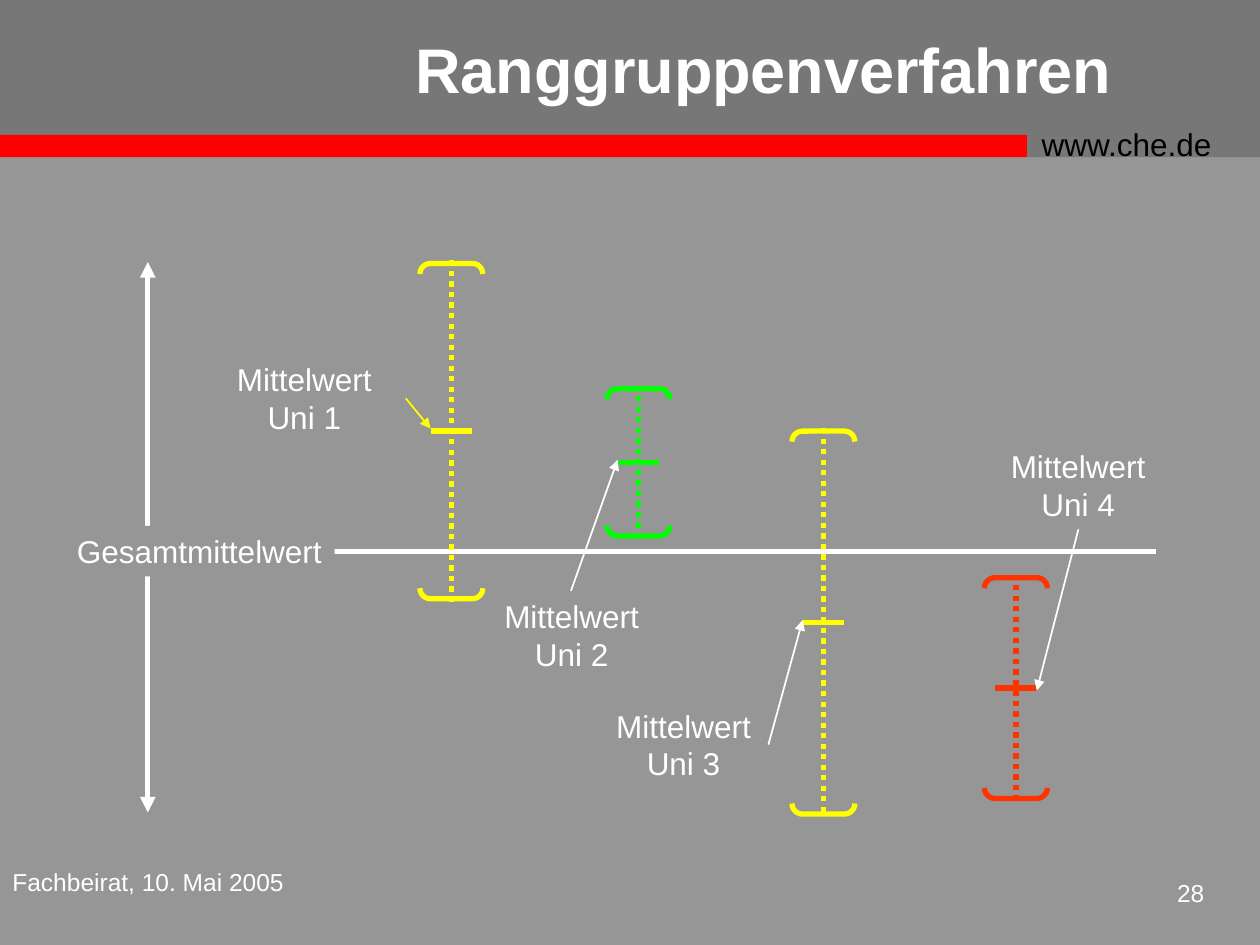
"""Build the slide that explains the ranking group method with four universities."""
from pptx import Presentation, util as u
from pptx.dml.color import RGBColor
from pptx.enum import dml, shapes, text
from pptx.oxml.ns import qn
from lxml import etree

COLORS = {"background": "969696", "header": "777777", "bar": "FF0000", "white": "FFFFFF",
          "black": "000000", "middle": "FFFF00", "top": "00FF00", "bottom": "FF3300"}
CENTER, LEFT, RIGHT = text.PP_ALIGN.CENTER, text.PP_ALIGN.LEFT, text.PP_ALIGN.RIGHT

presentation = Presentation()
presentation.slide_width, presentation.slide_height = u.Cm(25.4), u.Cm(19.05)
slide = presentation.slides.add_slide(presentation.slide_layouts[6])
slide.background.fill.solid()
slide.background.fill.fore_color.rgb = RGBColor.from_string(COLORS["background"])


def add_line(start, end, color, width=3, dash=None, arrows=()):
    connector = slide.shapes.add_connector(
        shapes.MSO_CONNECTOR.STRAIGHT, *(u.Cm(value) for value in (*start, *end)))
    connector.line.color.rgb = RGBColor.from_string(COLORS[color])
    connector.line.width = u.Pt(width)
    if dash:
        connector.line.dash_style = dash
    for arrow in arrows:
        etree.SubElement(connector.line._get_or_add_ln(), qn(f"a:{arrow}"), type="triangle")
    etree.SubElement(connector._element.spPr, qn("a:effectLst"))


def add_text(content, box, size=18, align=LEFT, color="white", bold=False,
             wrap=True, anchor=text.MSO_ANCHOR.TOP, fill=None):
    shape = slide.shapes.add_textbox(*(u.Cm(value) for value in box))
    if fill:
        shape.fill.solid()
        shape.fill.fore_color.rgb = RGBColor.from_string(COLORS[fill])
    frame = shape.text_frame
    frame.word_wrap, frame.vertical_anchor = wrap, anchor
    paragraph = frame.paragraphs[0]
    paragraph.text, paragraph.alignment = content, align
    for run in paragraph.runs:
        for name, value in {"name": "Arial", "size": u.Pt(size), "bold": bold}.items():
            setattr(run.font, name, value)
        run.font.color.rgb = RGBColor.from_string(COLORS[color])


for color, box in (("header", (0, 0, 25.4, 3.17)), ("bar", (0, 2.72, 20.7, 0.45))):
    band = slide.shapes.add_shape(shapes.MSO_SHAPE.RECTANGLE, *(u.Cm(value) for value in box))
    band.shadow.inherit = False
    band.fill.solid()
    band.fill.fore_color.rgb = RGBColor.from_string(COLORS[color])
    band.line.fill.background()

add_text("www.che.de", (20.75, 2.39, 4.45, 1.02), color="black", wrap=False)
add_text("28", (23.06, 17.58, 1.47, 1.07), size=14, align=RIGHT)
add_text("Fachbeirat, 10. Mai 2005", (0, 17.35, 6.1, 1.27), size=14, wrap=False)
add_text("Ranggruppenverfahren", (6.3, 0, 18.19, 2.74), size=36, align=CENTER,
         bold=True, anchor=text.MSO_ANCHOR.MIDDLE)

add_line((4.04, 11.12), (23.3, 11.12), "white")
add_line((2.98, 5.28), (2.98, 16.38), "white", arrows=("headEnd", "tailEnd"))
add_text("Gesamtmittelwert", (1.3, 10.6, 5.45, 1.02), wrap=False, fill="background")

universities = [
    {"color": "middle", "x": 9.1, "mean": 8.69, "length": 6.76, "label": (4.09, 7.14, 4.09),
     "pointer": (8.18, 8.03), "side": -1, "pointer_color": "middle"},
    {"color": "top", "x": 12.87, "mean": 9.32, "length": 2.97, "label": (9.91, 11.91, 3.23),
     "pointer": (11.51, 11.91), "side": -1, "pointer_color": "white"},
    {"color": "middle", "x": 16.6, "mean": 12.55, "length": 7.72, "label": (12.09, 14.12, 3.38),
     "pointer": (15.49, 15.01), "side": -1, "pointer_color": "white"},
    {"color": "bottom", "x": 20.48, "mean": 13.87, "length": 4.45, "label": (20.12, 8.89, 3.23),
     "pointer": (21.74, 10.67), "side": 1, "pointer_color": "white"},
]
bracket_width, tick, overhang = 1.27, 0.42, 0.06

for number, university in enumerate(universities, 1):
    color, x, mean, length, side = (
        university[key] for key in ("color", "x", "mean", "length", "side"))
    reach = length / 2 + overhang
    add_line((x, mean - reach), (x, mean + reach), color, dash=dml.MSO_LINE.ROUND_DOT)
    bracket = slide.shapes.add_shape(
        shapes.MSO_SHAPE.DOUBLE_BRACKET, u.Cm(x - length / 2), u.Cm(mean - bracket_width / 2),
        u.Cm(length), u.Cm(bracket_width))
    bracket.rotation = 270
    bracket.adjustments[0] = 0.167
    bracket.shadow.inherit = False
    bracket.fill.background()
    bracket.line.color.rgb = RGBColor.from_string(COLORS[color])
    bracket.line.width = u.Pt(3)
    add_line((x - tick, mean), (x + tick, mean), color)
    add_text(f"Mittelwert\nUni {number}", (*university["label"], 1.78), align=CENTER, wrap=False)
    add_line(university["pointer"], (x + side * tick, mean + side * 0.05),
             university["pointer_color"], width=1, arrows=("tailEnd",))

presentation.save("out.pptx")
